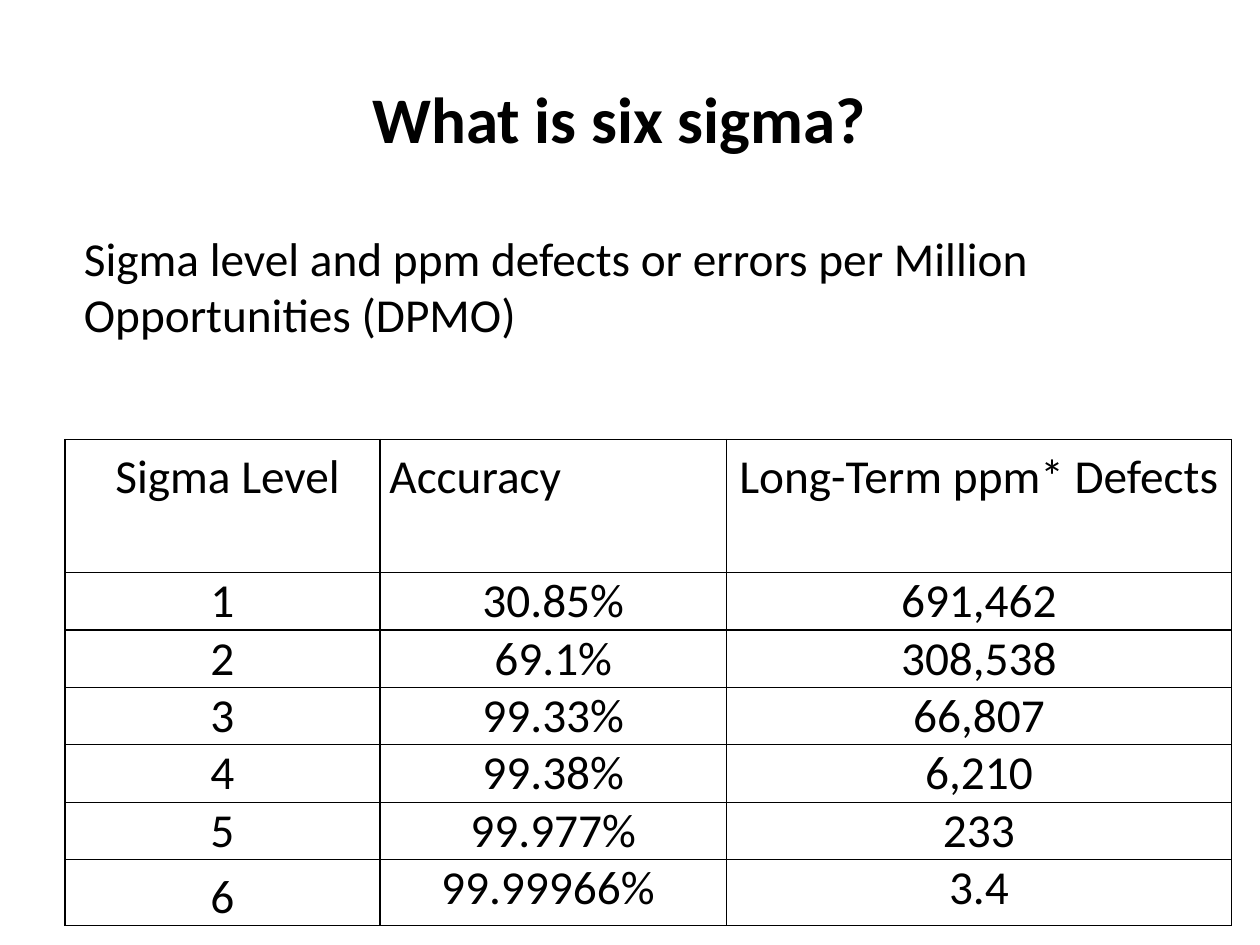
from lxml import etree
from pptx import Presentation
from pptx.dml.color import RGBColor
from pptx.enum import text
from pptx.oxml import ns
from pptx.util import Inches, Pt

COLORS = {"ink": "000000", "paper": "FFFFFF"}
LEFT, CENTER = text.PP_ALIGN.LEFT, text.PP_ALIGN.CENTER

HEADINGS = ("Sigma Level", "Accuracy", "Long-Term ppm* Defects")
LEVELS = (
    ("1", "30.85%", "691,462"),
    ("2", "69.1%", "308,538"),
    ("3", "99.33%", "66,807"),
    ("4", "99.38%", "6,210"),
    ("5", "99.977%", "233"),
    ("6", "99.99966%", "3.4"),
)
COLUMN_WIDTHS = (2.96, 3.26, 4.74)
ROW_HEIGHTS = (1.25,) + (0.54,) * 5 + (0.62,)


def write(frame, words, size=32, bold=False, align=LEFT, spacing=1.0):
    paragraph = frame.paragraphs[0]
    paragraph.alignment = align
    paragraph.line_spacing = spacing
    run = paragraph.add_run()
    run.text = words
    run.font.name = "Calibri"
    run.font.size = Pt(size)
    run.font.bold = bold
    run.font.color.rgb = RGBColor.from_string(COLORS["ink"])


def outline(cell, width=1):
    """Draw all four borders of a table cell."""
    properties = cell._tc.get_or_add_tcPr()
    for position, side in enumerate(("lnL", "lnR", "lnT", "lnB")):
        line = etree.Element(ns.qn(f"a:{side}"), w=str(Pt(width)))
        fill = etree.SubElement(line, ns.qn("a:solidFill"))
        etree.SubElement(fill, ns.qn("a:srgbClr"), val=COLORS["ink"])
        properties.insert(position, line)


class Deck:
    def __init__(self, width, height):
        self.presentation = Presentation()
        self.presentation.slide_width = Inches(width)
        self.presentation.slide_height = Inches(height)
        blank = self.presentation.slide_layouts[6]
        self.slide = self.presentation.slides.add_slide(blank)
        background = self.slide.background.fill
        background.solid()
        background.fore_color.rgb = RGBColor.from_string(COLORS["paper"])

    def text_box(self, box, words, anchor=text.MSO_ANCHOR.TOP, **style):
        frame = self.slide.shapes.add_textbox(*map(Inches, box)).text_frame
        frame.word_wrap = True
        frame.vertical_anchor = anchor
        write(frame, words, **style)

    def table(self, left, top, widths, heights):
        frame = self.slide.shapes.add_table(
            len(heights), len(widths), Inches(left), Inches(top),
            Inches(sum(widths)), Inches(sum(heights)))
        grid = frame.table
        grid.first_row = grid.horz_banding = False
        for column, width in zip(grid.columns, widths):
            column.width = Inches(width)
        for row, height in zip(grid.rows, heights):
            row.height = Inches(height)
        return grid

    def cell(self, cell, words, indent=0.0, **style):
        """Fill a table cell; a negative indent pushes from the right."""
        cell.margin_left = Inches(0.09 + max(indent, 0))
        cell.margin_right = Inches(0.09 + max(-indent, 0))
        cell.margin_top = cell.margin_bottom = 0
        cell.fill.background()
        outline(cell)
        write(cell.text_frame, words, **style)


def main():
    deck = Deck(11.84, 8.88)
    deck.text_box((0, 0.36, 11.64, 1.48), "What is six sigma?",
                  anchor=text.MSO_ANCHOR.MIDDLE, size=44, bold=True, align=CENTER)
    sigma_table = deck.table(0.61, 4.13, COLUMN_WIDTHS, ROW_HEIGHTS)
    last = len(LEVELS)
    indents = {(0, 0): 0.1, (last, 1): -0.1}
    for r, values in enumerate((HEADINGS,) + LEVELS):
        for c, value in enumerate(values):
            loose = r == 0 or (r, c) == (last, 0)
            deck.cell(sigma_table.cell(r, c), value,
                      indent=indents.get((r, c), 0),
                      align=LEFT if (r, c) == (0, 1) else CENTER,
                      spacing=1.15 if loose else 1.0)
    deck.text_box((0.69, 2.1, 10.86, 1.65),
                  "Sigma level and ppm defects or errors per Million Opportunities (DPMO)")
    deck.presentation.save("out.pptx")


if __name__ == "__main__":
    main()
